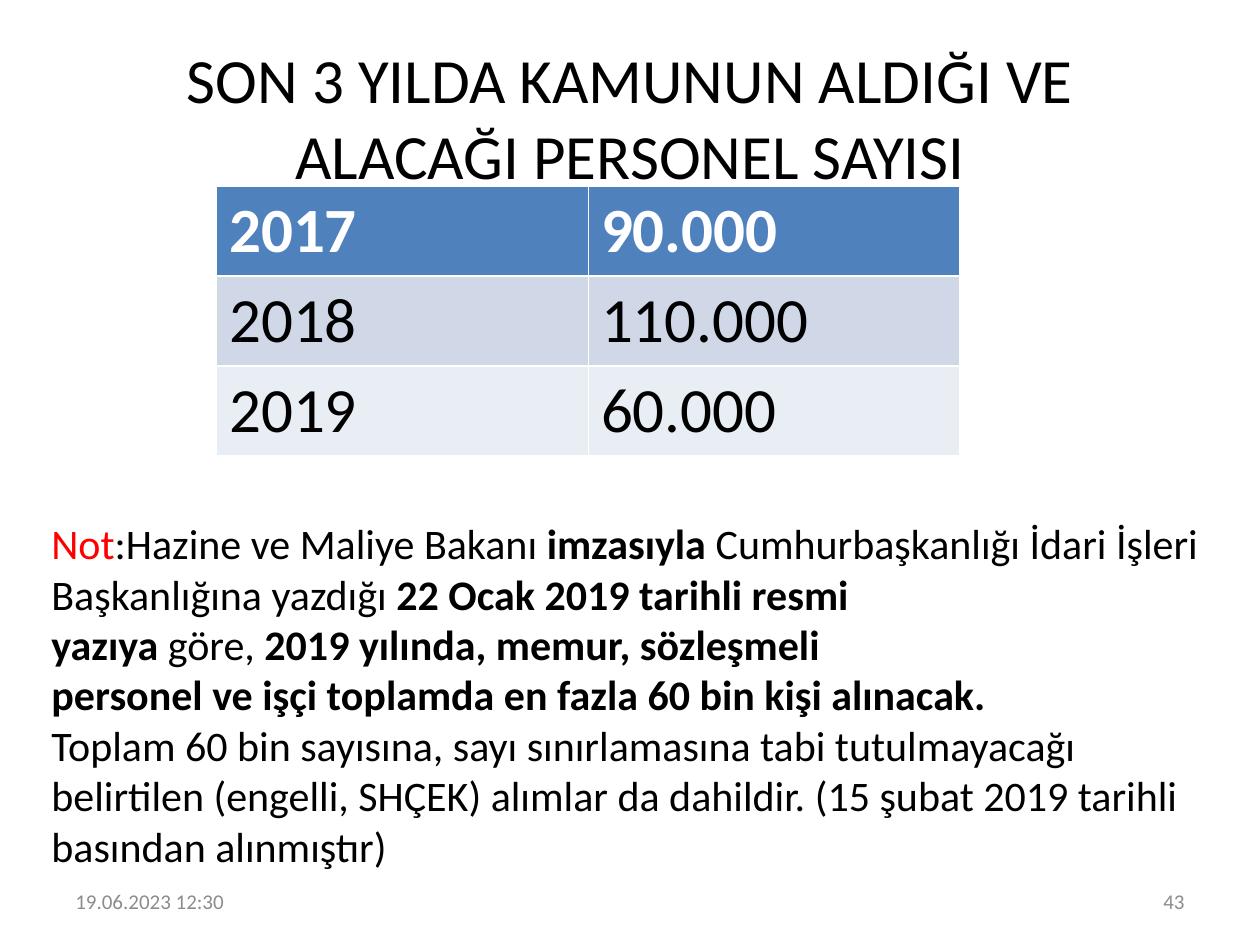
"""Build a slide on public-sector hiring with a yearly table and an explanatory note."""
from pptx import Presentation
from pptx.dml.color import RGBColor
from pptx.enum.text import MSO_ANCHOR, PP_ALIGN
from pptx.util import Inches, Pt

LEFT, CENTER, RIGHT = PP_ALIGN.LEFT, PP_ALIGN.CENTER, PP_ALIGN.RIGHT
MIDDLE = MSO_ANCHOR.MIDDLE
BLACK = RGBColor(0x00, 0x00, 0x00)
WHITE = RGBColor(0xFF, 0xFF, 0xFF)
RED = RGBColor(0xFF, 0x00, 0x00)
GRAY = RGBColor(0x8C, 0x8C, 0x8C)
HEADER_BLUE = RGBColor(0x4F, 0x81, 0xBD)
BAND_DARK = RGBColor(0xD0, 0xD8, 0xE8)
BAND_LIGHT = RGBColor(0xE9, 0xED, 0xF4)
FONT_NAME = "Calibri"
NO_BREAK_SPACE = chr(160)
MARGIN = Inches(0.5)


def set_font(font, size, color, bold=False):
    font.name = FONT_NAME
    font.size = Pt(size)
    font.color.rgb = color
    font.bold = bold


presentation = Presentation()
presentation.slide_width = Inches(10)
presentation.slide_height = Inches(7.5)
slide = presentation.slides.add_slide(presentation.slide_layouts[5])

title = slide.shapes.title
title.left, title.top = MARGIN, Inches(0.3)
title.width, title.height = presentation.slide_width - 2 * MARGIN, Inches(1.25)
title.text_frame.text = "SON 3 YILDA KAMUNUN ALDIĞI VE ALACAĞI PERSONEL SAYISI"
title.text_frame.vertical_anchor = MIDDLE
title_paragraph = title.text_frame.paragraphs[0]
title_paragraph.alignment = CENTER
set_font(title_paragraph.font, 36, BLACK)

hiring_rows = [
    (("2017", "90.000"), HEADER_BLUE, WHITE, True),
    (("2018", "110.000"), BAND_DARK, BLACK, False),
    (("2019", "60.000"), BAND_LIGHT, BLACK, False),
]
table = slide.shapes.add_table(
    len(hiring_rows), 2, Inches(1.72), Inches(1.48), Inches(5.9), Inches(2.1)
).table
for row, (values, fill_color, text_color, bold) in zip(table.rows, hiring_rows):
    for cell, value in zip(row.cells, values):
        cell.text = value
        cell.fill.solid()
        cell.fill.fore_color.rgb = fill_color
        set_font(cell.text_frame.paragraphs[0].font, 36, text_color, bold)

note_paragraphs = [
    [
        ("Not", RED, False),
        (":Hazine ve Maliye Bakanı~", BLACK, False),
        ("imzasıyla ", BLACK, True),
        ("Cumhurbaşkanlığı İdari İşleri Başkanlığına yazdığı~", BLACK, False),
        ("22 Ocak~2019~tarihli resmi yazıya~", BLACK, True),
        ("göre,", BLACK, False),
        ("~2019~yılında,~memur,~sözleşmeli personel~ve~işçi~toplamda "
         "en fazla 60 bin kişi alınacak.", BLACK, True),
    ],
    [
        ("Toplam 60 bin sayısına, sayı sınırlamasına tabi tutulmayacağı "
         "belirtilen (engelli, SHÇEK) alımlar da dahildir. "
         "(15 şubat 2019 tarihli basından alınmıştır)", BLACK, False),
    ],
]
note = slide.shapes.add_textbox(Inches(0.31), Inches(4.06), Inches(9.53), Inches(2.93))
note_frame = note.text_frame
note_frame.word_wrap = True
for index, pieces in enumerate(note_paragraphs):
    paragraph = note_frame.add_paragraph() if index else note_frame.paragraphs[0]
    for text, color, bold in pieces:
        run = paragraph.add_run()
        run.text = text.replace("~", NO_BREAK_SPACE)
        set_font(run.font, 24, color, bold)

footer_width = Inches(2.33)
footers = [
    ("19.06.2023 12:30", MARGIN, LEFT),
    ("43", presentation.slide_width - MARGIN - footer_width, RIGHT),
]
for text, left, alignment in footers:
    footer = slide.shapes.add_textbox(left, Inches(6.95), footer_width, Inches(0.4))
    footer.text_frame.word_wrap = True
    footer.text_frame.vertical_anchor = MIDDLE
    footer.text_frame.text = text
    paragraph = footer.text_frame.paragraphs[0]
    paragraph.alignment = alignment
    set_font(paragraph.font, 12, GRAY)

presentation.save("out.pptx")
